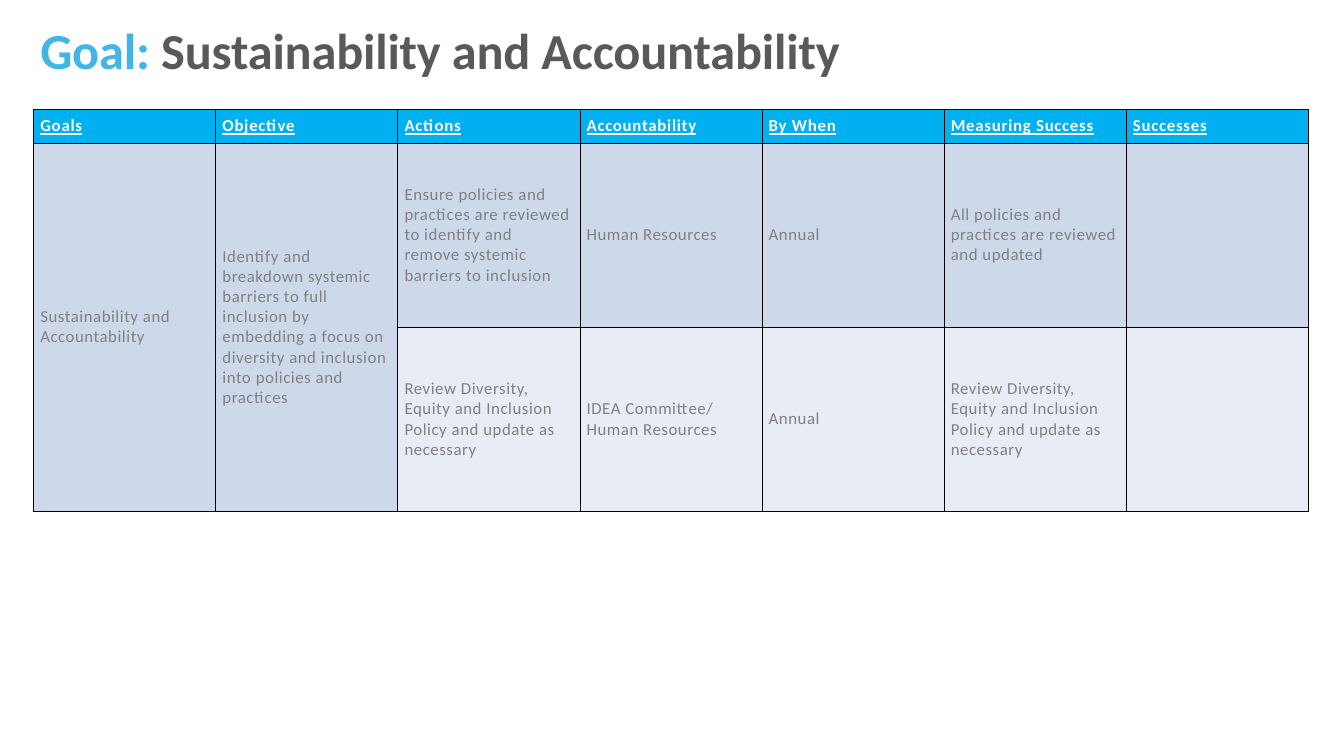
from lxml import etree
from pptx import Presentation
from pptx.dml.color import RGBColor
from pptx.enum.text import MSO_ANCHOR, MSO_AUTO_SIZE, PP_ALIGN
from pptx.oxml.ns import qn
from pptx.util import Inches, Pt

LEFT = PP_ALIGN.LEFT
TOP = MSO_ANCHOR.TOP
MIDDLE = MSO_ANCHOR.MIDDLE
FIT_SHAPE = MSO_AUTO_SIZE.SHAPE_TO_FIT_TEXT

TITLE = [("Goal: ", "accent"), ("Sustainability and Accountability", "title")]
HEADERS = ["Goals", "Objective", "Actions", "Accountability", "By When",
           "Measuring Success", "Successes"]
POLICY_REVIEW = "Review Diversity, Equity and Inclusion Policy and update as necessary"
ROWS = [
    [
        ["Sustainability and Accountability"],
        ["Identify and breakdown systemic barriers to full inclusion by embedding "
         "a focus on diversity and inclusion into policies and practices"],
        ["Ensure policies and practices are reviewed to identify and",
         "remove systemic barriers to inclusion"],
        ["Human Resources"],
        ["Annual"],
        ["All policies and practices are reviewed and updated"],
        [],
    ],
    [
        [],
        [],
        [POLICY_REVIEW],
        ["IDEA Committee/", "Human Resources"],
        ["Annual"],
        [POLICY_REVIEW],
        [],
    ],
]
MERGED_COLUMNS = [0, 1]

THEME = {
    "font": "Calibri",
    "colors": {"accent": "41B6E6", "title": "595959", "header": "FFFFFF",
               "body": "808080", "border": "000000"},
    "fills": ["00B0F0", "CDD9EA", "E8EDF5"],
    "title": {"size": 54, "leading": 64.8, "tracking": -0.2, "bold": True, "underline": False},
    "header": {"size": 18, "leading": 21.6, "tracking": 0.8, "bold": True, "underline": True},
    "body": {"size": 18, "leading": 21.6, "tracking": 0.6, "bold": False, "underline": False},
    "border_width": 1,
}
TABLE_LEFT, TABLE_TOP = 0.5, 1.63
COLUMN_WIDTH = 2.71
HEADER_HEIGHT, ROW_HEIGHT = 0.5, 2.74
CELL_MARGIN = 0.1


def set_margins(target, margin):
    target.margin_left = target.margin_right = Inches(margin)
    target.margin_top = target.margin_bottom = Inches(margin)


def write_paragraph(paragraph, runs, style):
    paragraph.alignment = LEFT
    paragraph.line_spacing = Pt(style["leading"])
    for text, color in runs:
        run = paragraph.add_run()
        run.text = text
        run.font.name = THEME["font"]
        run.font.size = Pt(style["size"])
        run.font.bold = style["bold"]
        run.font.underline = style["underline"]
        run.font.color.rgb = RGBColor.from_string(THEME["colors"][color])
        run._r.get_or_add_rPr().set("spc", str(round(style["tracking"] * 100)))


def add_borders(cell):
    properties = cell._tc.get_or_add_tcPr()
    for position, side in enumerate(["lnL", "lnR", "lnT", "lnB"]):
        line = etree.Element(qn(f"a:{side}"), w=str(Pt(THEME["border_width"])))
        fill = etree.SubElement(line, qn("a:solidFill"))
        etree.SubElement(fill, qn("a:srgbClr"), val=THEME["colors"]["border"])
        properties.insert(position, line)


def fill_cell(cell, lines, style_name, fill):
    cell.fill.solid()
    cell.fill.fore_color.rgb = RGBColor.from_string(fill)
    cell.vertical_anchor = MIDDLE
    set_margins(cell, CELL_MARGIN)
    add_borders(cell)
    for index, line in enumerate(lines):
        frame = cell.text_frame
        paragraph = frame.add_paragraph() if index else frame.paragraphs[0]
        write_paragraph(paragraph, [(line, style_name)], THEME[style_name])


def add_title(slide):
    title = slide.shapes.title
    title.left, title.top = Inches(0.6), Inches(0.28)
    title.width, title.height = Inches(16.89), Inches(1.1)
    frame = title.text_frame
    frame.word_wrap = True
    frame.auto_size = FIT_SHAPE
    frame.vertical_anchor = TOP
    set_margins(frame, 0)
    write_paragraph(frame.paragraphs[0], TITLE, THEME["title"])


def add_goal_table(slide):
    heights = [HEADER_HEIGHT] + [ROW_HEIGHT] * len(ROWS)
    table = slide.shapes.add_table(
        len(heights), len(HEADERS), Inches(TABLE_LEFT), Inches(TABLE_TOP),
        Inches(COLUMN_WIDTH * len(HEADERS)), Inches(sum(heights))).table
    for column in table.columns:
        column.width = Inches(COLUMN_WIDTH)
    for row, height in zip(table.rows, heights):
        row.height = Inches(height)
    content = [[[header] for header in HEADERS]] + ROWS
    for row_index, (cells, fill) in enumerate(zip(content, THEME["fills"])):
        style_name = "body" if row_index else "header"
        for column_index, lines in enumerate(cells):
            fill_cell(table.cell(row_index, column_index), lines, style_name, fill)
    for column_index in MERGED_COLUMNS:
        table.cell(1, column_index).merge(table.cell(len(ROWS), column_index))


def main():
    presentation = Presentation()
    presentation.slide_width = Inches(20)
    presentation.slide_height = Inches(11.25)
    slide = presentation.slides.add_slide(presentation.slide_layouts[5])
    add_title(slide)
    add_goal_table(slide)
    presentation.save("out.pptx")


if __name__ == "__main__":
    main()
